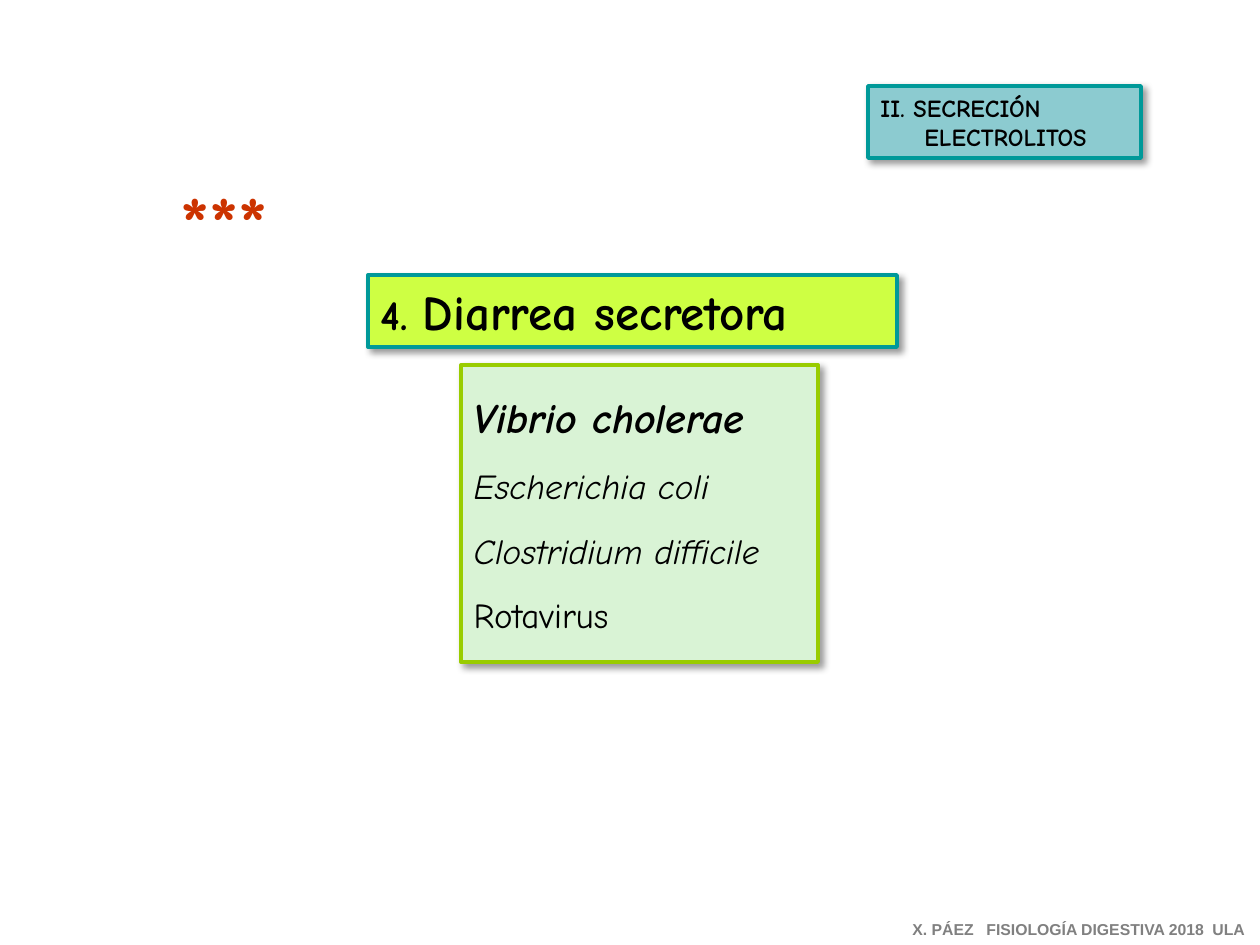
from dataclasses import dataclass

from lxml.etree import SubElement
from pptx import Presentation
from pptx.dml.color import RGBColor
from pptx.enum.shapes import MSO_SHAPE
from pptx.enum.text import MSO_ANCHOR, MSO_AUTO_SIZE, PP_ALIGN
from pptx.oxml import parse_xml
from pptx.oxml.ns import nsdecls, qn
from pptx.util import Pt

PX = 914400 / 126


@dataclass(frozen=True)
class Theme:
    font: str = "Comic Neue"
    footer_font: str = "Arial"
    text: str = "000000"
    stars: str = "CC3300"
    footer: str = "808080"
    teal_line: str = "009999"
    teal_fill: str = "8CCBD0"
    lime_fill: str = "CEFF43"
    green_line: str = "99CC00"
    green_fill: str = "D9F3D5"
    border: float = 2.25
    stars_size: int = 44
    title_size: int = 28
    lead_size: int = 24
    list_size: int = 20
    topic_size: int = 14
    footer_size: int = 9
    list_gap: int = 13


THEME = Theme()


def px(length):
    return round(length * PX)


def place(shape, left, top, width, height):
    shape.left, shape.top = px(left), px(top)
    shape.width, shape.height = px(width), px(height)


def add_outer_shadow(effects, opacity):
    """Fill an a:effectLst with a soft shadow towards the lower right."""
    shadow = SubElement(effects, qn("a:outerShdw"), blurRad=str(Pt(4)),
                        dist=str(Pt(3)), dir="2700000", algn="tl", rotWithShape="0")
    color = SubElement(shadow, qn("a:srgbClr"), val=THEME.text)
    SubElement(color, qn("a:alpha"), val=str(opacity * 1000))


def style_panel(shape, fill, line):
    shape.fill.solid()
    shape.fill.fore_color.rgb = RGBColor.from_string(fill)
    shape.line.color.rgb = RGBColor.from_string(line)
    shape.line.width = Pt(THEME.border)
    shape.shadow.inherit = False
    add_outer_shadow(shape.element.spPr.find(qn("a:effectLst")), 40)


def prepare_text(shape, anchor):
    frame = shape.text_frame
    frame.auto_size = MSO_AUTO_SIZE.NONE
    frame.word_wrap = True
    frame.vertical_anchor = anchor
    return frame


def style_paragraph(paragraph, size, color=THEME.text, font=THEME.font, bold=True, italic=False):
    paragraph.alignment = PP_ALIGN.LEFT
    paragraph.font.name = font
    paragraph.font.size = Pt(size)
    paragraph.font.bold = bold
    paragraph.font.italic = italic
    paragraph.font.color.rgb = RGBColor.from_string(color)


def remove_bullet(paragraph):
    properties = paragraph._p.get_or_add_pPr()
    properties.set("marL", "0")
    properties.set("indent", "0")
    properties.find(qn("a:defRPr")).addprevious(parse_xml(f"<a:buNone {nsdecls('a')}/>"))


def set_tab_stops(paragraph, positions):
    stops = parse_xml(f"<a:tabLst {nsdecls('a')}/>")
    for position in positions:
        SubElement(stops, qn("a:tab"), pos=str(px(position)), algn="l")
    paragraph._p.get_or_add_pPr().find(qn("a:defRPr")).addprevious(stops)


def fill_title(title):
    place(title, 368, 275, 529, 72)
    style_panel(title, THEME.lime_fill, THEME.teal_line)
    paragraph = prepare_text(title, MSO_ANCHOR.MIDDLE).paragraphs[0]
    style_paragraph(paragraph, THEME.title_size)
    number, heading = paragraph.add_run(), paragraph.add_run()
    number.text, heading.text = "4. ", "Diarrea secretora"
    number.font.size = Pt(THEME.lead_size)


def fill_germ_list(body):
    place(body, 461, 365, 357, 297)
    style_panel(body, THEME.green_fill, THEME.green_line)
    frame = prepare_text(body, MSO_ANCHOR.MIDDLE)
    germs = ["Vibrio cholerae", "Escherichia coli", "Clostridium difficile", "Rotavirus"]
    frame.text = "\n".join(germs)
    for index, paragraph in enumerate(frame.paragraphs):
        lead = index == 0
        style_paragraph(paragraph, THEME.lead_size if lead else THEME.list_size,
                        bold=lead, italic=paragraph.text != "Rotavirus")
        paragraph.space_before = Pt(0 if lead else THEME.list_gap)
        remove_bullet(paragraph)


def add_stars(slide):
    box = slide.shapes.add_textbox(px(168), px(168), px(149), px(106))
    paragraph = prepare_text(box, MSO_ANCHOR.TOP).paragraphs[0]
    style_paragraph(paragraph, THEME.stars_size, THEME.stars)
    run = paragraph.add_run()
    run.text = "***"
    effects = SubElement(run._r.get_or_add_rPr(), qn("a:effectLst"))
    add_outer_shadow(effects, 100)


def add_topic(slide):
    box = slide.shapes.add_shape(MSO_SHAPE.RECTANGLE, px(868), px(86), px(273), px(72))
    style_panel(box, THEME.teal_fill, THEME.teal_line)
    frame = prepare_text(box, MSO_ANCHOR.MIDDLE)
    frame.text = "II. SECRECIÓN\nELECTROLITOS"
    for paragraph in frame.paragraphs:
        style_paragraph(paragraph, THEME.topic_size)
    frame.paragraphs[1]._p.get_or_add_pPr().set("marL", str(px(44)))


def add_footer(slide):
    box = slide.shapes.add_textbox(px(900), px(914), px(360), px(31))
    frame = prepare_text(box, MSO_ANCHOR.TOP)
    frame.margin_right = 0
    frame.text = "X. PÁEZ\tFISIOLOGÍA DIGESTIVA 2018\tULA"
    paragraph = frame.paragraphs[0]
    style_paragraph(paragraph, THEME.footer_size, THEME.footer, THEME.footer_font)
    set_tab_stops(paragraph, [74, 300])


def main():
    presentation = Presentation()
    presentation.slide_width, presentation.slide_height = px(1260), px(945)
    slide = presentation.slides.add_slide(presentation.slide_layouts[1])
    fill_title(slide.shapes.title)
    fill_germ_list(slide.placeholders[1])
    add_stars(slide)
    add_topic(slide)
    add_footer(slide)
    presentation.save("out.pptx")


if __name__ == "__main__":
    main()
